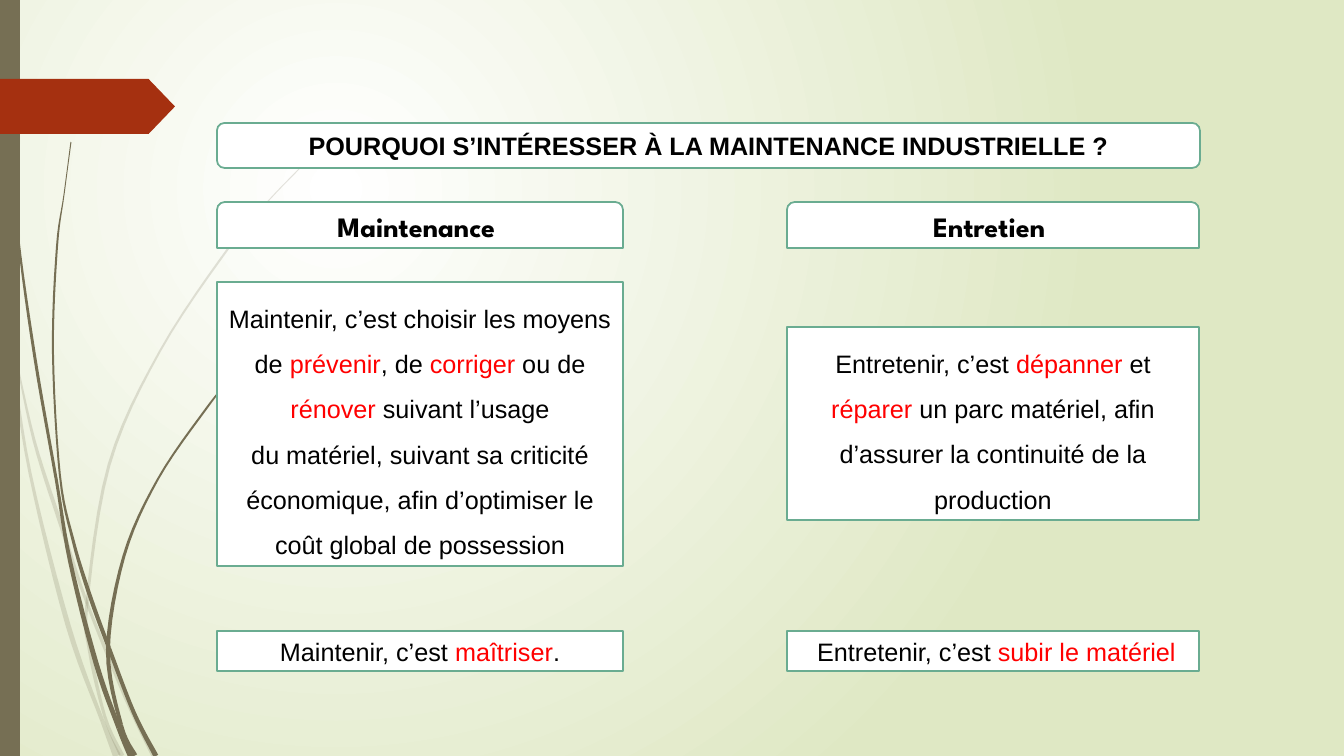
"""Build the slide comparing industrial maintenance with simple upkeep."""
from dataclasses import dataclass
from math import hypot

from pptx import Presentation
from pptx.dml.color import RGBColor
from pptx.enum.shapes import MSO_SHAPE as SHAPE
from pptx.enum.text import MSO_ANCHOR as ANCHOR, MSO_AUTO_SIZE as AUTO, PP_ALIGN as ALIGN
from pptx.oxml import parse_xml
from pptx.oxml.ns import nsdecls, qn
from pptx.util import Pt

SCALE = 914400 / 100.8
STEPS = 6
OLIVE, RUST, TEAL = "766F54", "A53010", "6AAC91"
WHITE, BLACK, RED = "FFFFFF", "000000", "FF0000"
FULL, LEFT, RIGHT = (217, 983), (217, 406), (787, 412)
BACKGROUND = f"""<p:bg {nsdecls('p', 'a')}><p:bgPr><a:gradFill rotWithShape="1"><a:gsLst>
<a:gs pos="0"><a:srgbClr val="FFFFFF"/></a:gs>
<a:gs pos="100000"><a:srgbClr val="DFE8C4"/></a:gs></a:gsLst>
<a:path path="circle"><a:fillToRect l="50000" t="50000" r="100000" b="100000"/></a:path>
</a:gradFill><a:effectLst/></p:bgPr></p:bg>"""


@dataclass
class Wisp:
    points: list[tuple[int, int, int]]
    joints: tuple[int, ...]
    alpha: int = 100


@dataclass
class Card:
    column: tuple[int, int]
    y: int
    h: int
    text: str
    kind: SHAPE = SHAPE.RECTANGLE
    size: int = 18
    font: str = "Arial"
    bold: bool = False
    spacing: float = 1.0


@dataclass
class Heading(Card):
    kind: SHAPE = SHAPE.ROUND_2_SAME_RECTANGLE
    size: int = 20
    font: str = "League Spartan"
    bold: bool = True


WISPS = [
    Wisp([(0, 292, 5), (11, 353, 3), (30, 473, 3), (68, 625, 5), (102, 720, 4),
          (117, 756, 8)], (1, 4), 20),
    Wisp([(14, 348, 1), (34, 440, 3), (61, 525, 4), (87, 603, 3), (126, 698, 4),
          (154, 756, 5)], (3,), 20),
    Wisp([(314, 154, 1), (270, 199, 1), (230, 246, 2), (160, 351, 2), (109, 465, 3),
          (87, 603, 3), (90, 651, 4), (105, 717, 3), (122, 756, 5)], (5, 7), 20),
    Wisp([(4, 0, 1), (8, 110, 1), (18, 235, 2), (35, 358, 3), (56, 478, 3),
          (70, 561, 4), (96, 663, 5), (119, 728, 5), (132, 756, 8)], (4, 7)),
    Wisp([(71, 142, 1), (64, 195, 1), (57, 247, 2), (53, 352, 2), (60, 476, 2),
          (73, 540, 3), (90, 596, 4), (109, 648, 4), (134, 713, 4), (156, 756, 5)],
         (4, 7)),
    Wisp([(262, 347, 1), (233, 376, 1), (206, 409, 2), (158, 479, 2), (124, 556, 3),
          (108, 650, 4), (121, 725, 4), (134, 756, 7)], (5, 6)),
]
TITLE = Card(FULL, 123, 45, "POURQUOI S’INTÉRESSER À LA MAINTENANCE INDUSTRIELLE ?",
             bold=True)
CARDS = [
    Heading(LEFT, 202, 46, "Maintenance "),
    Heading(RIGHT, 202, 46, "Entretien "),
    Card(RIGHT, 327, 193, "Entretenir, c’est *dépanner* et *réparer* un parc matériel, "
         "afin d’assurer la continuité de la production", spacing=1.5),
    Card(RIGHT, 631, 40, " Entretenir, c’est *subir le matériel*"),
    Card(LEFT, 282, 284, "Maintenir, c’est choisir les moyens de *prévenir*, de *corriger* "
         "ou de *rénover* suivant l’usage\ndu matériel, suivant sa criticité économique, "
         "afin d’optimiser le coût global de possession", spacing=1.5),
    Card(LEFT, 631, 40, "Maintenir, c’est *maîtriser*."),
]


def px(n: float) -> int:
    """Turn pixels into EMU."""
    return round(n * SCALE)


def rgb(code: str) -> RGBColor:
    """Turn a hex string into a colour."""
    return RGBColor.from_string(code)


def paint(sp, fill: str, line: str | None = None) -> None:
    """Set the fill and outline of a shape and drop its shadow."""
    sp.shadow.inherit = False
    sp.fill.solid()
    sp.fill.fore_color.rgb = rgb(fill)
    if line:
        sp.line.color.rgb = rgb(line)
        sp.line.width = Pt(1.25)
    else:
        sp.line.fill.background()


def write(sp, card: Card) -> None:
    """Fill a shape with centred text, showing starred passages in red."""
    tf = sp.text_frame
    tf.word_wrap = True
    tf.auto_size = AUTO.NONE
    tf.vertical_anchor = ANCHOR.MIDDLE
    tf.text = card.text
    for p in tf.paragraphs:
        pieces = p.text.split("*")
        p.text = ""
        p.alignment = ALIGN.CENTER
        p.line_spacing = card.spacing
        for i, piece in enumerate(pieces):
            if not piece:
                continue
            r = p.add_run()
            r.text = piece
            r.font.name = card.font
            r.font.size = Pt(card.size)
            r.font.bold = card.bold
            r.font.color.rgb = rgb(RED if i % 2 else BLACK)


def smooth(points: list[tuple[int, int, int]]) -> list[tuple[float, ...]]:
    """Sample a Catmull-Rom curve through the points, widths included."""
    ends = [points[0], *points, points[-1]]
    curve = []
    for a, b, c, d in zip(ends, ends[1:], ends[2:], ends[3:]):
        for t in (k / STEPS for k in range(STEPS)):
            curve.append(tuple(
                (2 * q + (r - p) * t + (2 * p - 5 * q + 4 * r - s) * t**2
                 + (3 * q - p - 3 * r + s) * t**3) / 2
                for p, q, r, s in zip(a, b, c, d)))
    return curve + [points[-1]]


def draw_wisp(s, wisp: Wisp) -> None:
    """Draw one tapering blade of grass, divided at its joints."""
    curve = smooth(wisp.points)
    near, far = [], []
    for (x0, y0, _), (x, y, w), (x1, y1, _) in zip(
            [curve[0], *curve], curve, [*curve[1:], curve[-1]]):
        dx, dy = x1 - x0, y1 - y0
        half = w / 2 / hypot(dx, dy)
        near.append((px(x - dy * half), px(y + dx * half)))
        far.append((px(x + dy * half), px(y - dx * half)))
    cuts = [0, *(j * STEPS for j in wisp.joints), len(curve) - 1]
    for first, last in zip(cuts, cuts[1:]):
        outline = near[first:last + 1] + far[first:last + 1][::-1]
        builder = s.shapes.build_freeform(*outline[0])
        builder.add_line_segments(outline[1:], close=True)
        sp = builder.convert_to_shape()
        paint(sp, OLIVE)
        if wisp.alpha < 100:
            color = sp._element.spPr.find(".//" + qn("a:srgbClr"))
            color.append(parse_xml(f'<a:alpha {nsdecls("a")} val="{wisp.alpha * 1000}"/>'))


def add_box(s, card: Card, kind: SHAPE):
    """Add the outlined white box of a card."""
    x, w = card.column
    sp = s.shapes.add_shape(kind, px(x), px(card.y), px(w), px(card.h))
    paint(sp, WHITE, TEAL)
    return sp


def place_title(s, card: Card) -> None:
    """Set the title placeholder over its rounded box."""
    box = add_box(s, card, SHAPE.ROUNDED_RECTANGLE)
    sp = s.shapes.title
    sp.left, sp.top, sp.width, sp.height = box.left, box.top, box.width, box.height
    s.shapes._spTree.append(sp._element)
    write(sp, card)


def main() -> None:
    """Build and save the slide."""
    prs = Presentation()
    prs.slide_width, prs.slide_height = px(1344), px(756)
    s = prs.slides.add_slide(prs.slide_layouts[5])
    s._element.cSld.insert(0, parse_xml(BACKGROUND))
    for wisp in WISPS:
        draw_wisp(s, wisp)
    paint(s.shapes.add_shape(SHAPE.RECTANGLE, 0, 0, px(20), px(756)), OLIVE)
    arrow = s.shapes.add_shape(SHAPE.PENTAGON, 0, px(79), px(175), px(55))
    arrow.adjustments[0] = 0.48
    paint(arrow, RUST)
    place_title(s, TITLE)
    for card in CARDS:
        write(add_box(s, card, card.kind), card)
    prs.save("out.pptx")


if __name__ == "__main__":
    main()
